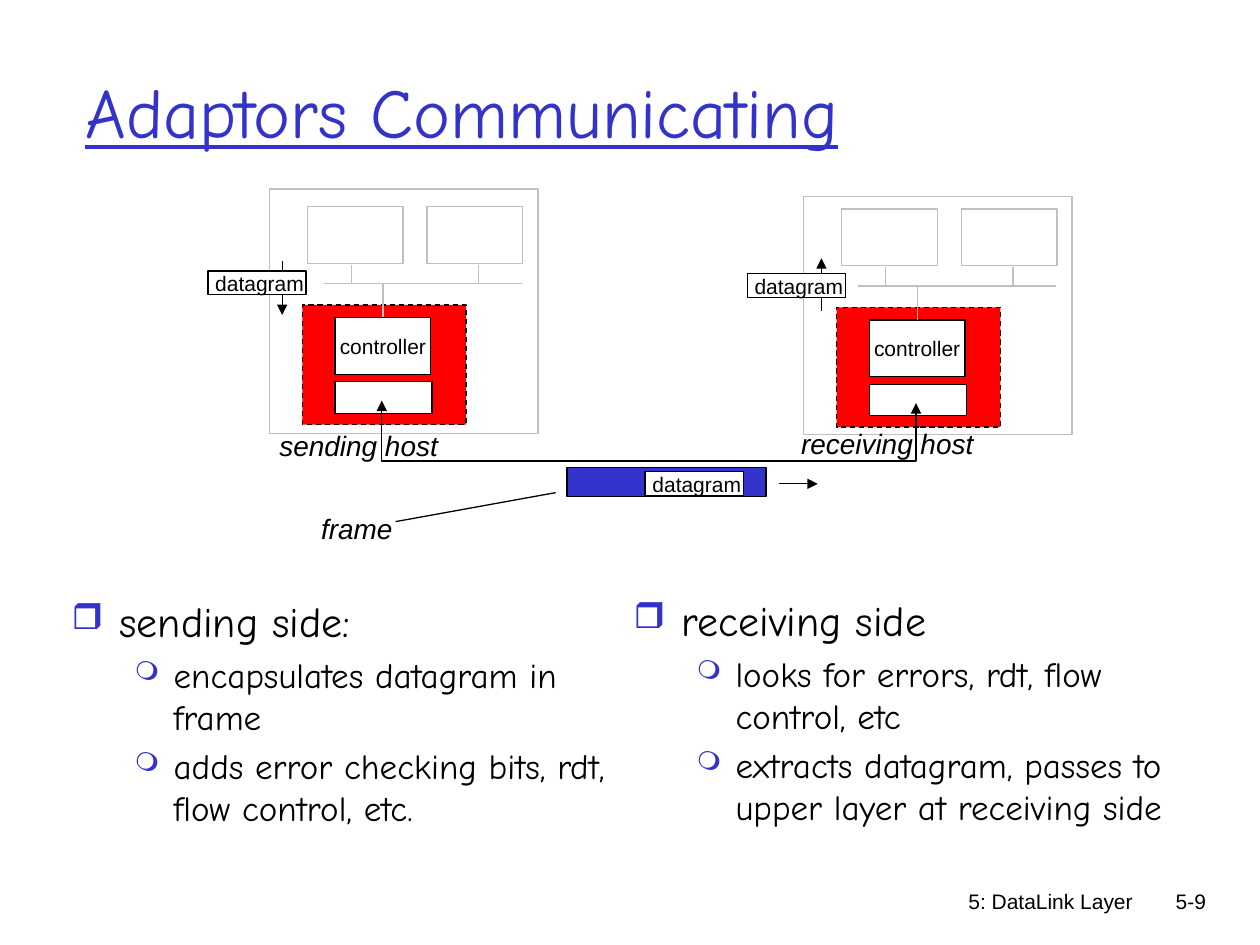
from dataclasses import dataclass
from typing import Optional

from lxml import etree
from pptx import Presentation
from pptx import util as u
from pptx.dml.color import RGBColor
from pptx.enum import dml, shapes, text
from pptx.oxml.ns import qn

COLORS = {"blue": "3333CC", "black": "000000", "white": "FFFFFF",
          "gray": "C0C0C0", "red": "FF0000"}
BODY_FONT, LABEL_FONT = "Comic Neue", "Arial"
LINE_WIDTH = u.Pt(0.75)
HOST_SIZE = (0.76, 0.45)  # screens and controller share one size


@dataclass
class Host:
    dx: float
    dy: float
    top: float
    height: float


@dataclass
class Label:
    words: str
    left: float
    top: float
    width: float
    height: float
    size: float = 12
    font: str = LABEL_FONT
    color: str = "black"
    italic: Optional[bool] = None
    underline: Optional[bool] = None
    align: Optional[text.PP_ALIGN] = None
    anchor: text.MSO_ANCHOR = text.MSO_ANCHOR.TOP
    wrap: bool = False


@dataclass
class BulletStyle:
    mark: str
    percent: int
    size: float
    margin: float
    indent: float


BULLETS = [BulletStyle("❒", 85, 24, 0.38, -0.38), BulletStyle("❍", 75, 20, 0.81, -0.31)]


def rgb(name: str) -> RGBColor:
    return RGBColor.from_string(COLORS[name])


def style_font(paragraph, size: float, name: str, color: str) -> None:
    paragraph.font.size = u.Pt(size)
    paragraph.font.name = name
    paragraph.font.color.rgb = rgb(color)


def add_box(slide, left: float, top: float, width: float, height: float,
            fill: str = "white", line: str = "black", dashed: bool = False):
    shape = slide.shapes.add_shape(shapes.MSO_SHAPE.RECTANGLE, u.Inches(left), u.Inches(top),
                                   u.Inches(width), u.Inches(height))
    shape.shadow.inherit = False
    shape.fill.solid()
    shape.fill.fore_color.rgb = rgb(fill)
    shape.line.color.rgb = rgb(line)
    shape.line.width = LINE_WIDTH
    if dashed:
        shape.line.dash_style = dml.MSO_LINE.DASH
    return shape


def add_arrowheads(shape, *ends: str) -> None:
    line = shape.line._get_or_add_ln()
    for end in ends:
        etree.SubElement(line, qn(f"a:{end}"), type="triangle")


def add_line(slide, x1: float, y1: float, x2: float, y2: float,
             color: str = "black", arrow: bool = False):
    connector = slide.shapes.add_connector(shapes.MSO_CONNECTOR.STRAIGHT, u.Inches(x1),
                                           u.Inches(y1), u.Inches(x2), u.Inches(y2))
    connector.line.color.rgb = rgb(color)
    connector.line.width = LINE_WIDTH
    etree.SubElement(connector._element.spPr, qn("a:effectLst"))
    if arrow:
        add_arrowheads(connector, "tailEnd")
    return connector


def add_label(slide, label: Label) -> None:
    box = slide.shapes.add_textbox(u.Inches(label.left), u.Inches(label.top),
                                   u.Inches(label.width), u.Inches(label.height))
    frame = box.text_frame
    frame.word_wrap = label.wrap
    if not label.wrap:
        frame.auto_size = text.MSO_AUTO_SIZE.SHAPE_TO_FIT_TEXT
    frame.vertical_anchor = label.anchor
    paragraph = frame.paragraphs[0]
    paragraph.text = label.words
    paragraph.alignment = label.align
    style_font(paragraph, label.size, label.font, label.color)
    paragraph.font.italic = label.italic
    paragraph.font.underline = label.underline


def add_datagram(slide, left: float, top: float) -> None:
    add_box(slide, left, top, 0.78, 0.19)
    add_label(slide, Label("datagram", left - 0.04, top - 0.05, 0.92, 0.3))


def add_host(slide, host: Host) -> None:
    dx, dy = host.dx, host.dy
    add_box(slide, 2.14 + dx, host.top, 2.13, host.height, line="gray")
    # Adaptor card with controller and link interface
    add_box(slide, 2.4 + dx, 2.42 + dy, 1.3, 0.95, fill="red", dashed=True)
    add_box(slide, 2.66 + dx, 3.03 + dy, 0.77, 0.25)
    controller = add_box(slide, 2.66 + dx, 2.52 + dy, *HOST_SIZE)
    frame = controller.text_frame
    frame.word_wrap = False
    frame.vertical_anchor = text.MSO_ANCHOR.MIDDLE
    paragraph = frame.paragraphs[0]
    paragraph.text = "controller"
    paragraph.alignment = text.PP_ALIGN.CENTER
    style_font(paragraph, 12, LABEL_FONT, "black")
    # Bus joining the controller to the two upper units
    bus = 2.25 + dy
    add_line(slide, 2.57 + dx, bus, 4.14 + dx, bus, "gray")
    stub = add_line(slide, 3.04 + dx, 2.52 + dy, 3.04 + dx, bus, "gray")
    stub.begin_connect(controller, 0)
    for left, stem in ((2.44, 2.79), (3.39, 3.8)):
        add_box(slide, left + dx, 1.64 + dy, *HOST_SIZE, line="gray")
        add_line(slide, stem + dx, bus, stem + dx, bus - 0.15, "gray")


def add_bullets(slide, left: float, top: float, width: float, height: float,
                items: list[tuple[int, str]]) -> None:
    box = slide.shapes.add_textbox(u.Inches(left), u.Inches(top), u.Inches(width), u.Inches(height))
    frame = box.text_frame
    frame.word_wrap = True
    for index, (level, words) in enumerate(items):
        style = BULLETS[level]
        paragraph = frame.add_paragraph() if index else frame.paragraphs[0]
        paragraph.text = words
        paragraph.level = level
        properties = paragraph._p.get_or_add_pPr()
        properties.set("marL", str(u.Inches(style.margin)))
        properties.set("indent", str(u.Inches(style.indent)))
        color = etree.SubElement(properties, qn("a:buClr"))
        etree.SubElement(color, qn("a:srgbClr"), val=COLORS["blue"])
        etree.SubElement(properties, qn("a:buSzPct"), val=str(style.percent * 1000))
        etree.SubElement(properties, qn("a:buChar"), char=style.mark)
        paragraph.space_before = u.Pt(style.size * 0.2)
        style_font(paragraph, style.size, BODY_FONT, "black")


def add_link(slide) -> None:
    points = [(3.03, 3.18), (3.03, 3.66), (7.27, 3.66), (7.27, 3.2)]
    corners = [(u.Inches(x), u.Inches(y)) for x, y in points]
    builder = slide.shapes.build_freeform(*corners[0])
    builder.add_line_segments(corners[1:], close=False)
    link = builder.convert_to_shape()
    link.shadow.inherit = False
    link.fill.background()
    link.line.color.rgb = rgb("black")
    link.line.width = LINE_WIDTH
    add_arrowheads(link, "headEnd", "tailEnd")


def main() -> None:
    presentation = Presentation()
    presentation.slide_width, presentation.slide_height = u.Inches(10), u.Inches(7.5)
    slide = presentation.slides.add_slide(presentation.slide_layouts[6])

    # Footer, title and the two lists
    right = text.PP_ALIGN.RIGHT
    add_label(slide, Label("5: DataLink Layer", 5.92, 7, 3.17, 0.5, align=right, wrap=True))
    add_label(slide, Label("5-9", 8.93, 7, 0.74, 0.5, align=right, wrap=True))
    add_label(slide, Label("Adaptors Communicating", 0.58, 0.25, 8.5, 1.25, 40, BODY_FONT, "blue",
                           underline=True, anchor=text.MSO_ANCHOR.MIDDLE, wrap=True))
    add_bullets(slide, 0.47, 4.68, 4.45, 2.12, [
        (0, "sending side:"), (1, "encapsulates datagram in frame"),
        (1, "adds error checking bits, rdt, flow control, etc.")])
    add_bullets(slide, 4.93, 4.67, 4.47, 2.02, [
        (0, "receiving side"), (1, "looks for errors, rdt, flow control, etc"),
        (1, "extracts datagram, passes to upper layer at receiving side")])

    # Hosts
    for host in (Host(0, 0, 1.5, 1.94), Host(4.24, 0.02, 1.56, 1.89)):
        add_host(slide, host)
    add_label(slide, Label("sending host", 2.12, 3.35, 1.46, 0.37, 16, italic=True))
    add_label(slide, Label("receiving host", 6.26, 3.34, 1.57, 0.37, 16, italic=True))

    # Datagrams going down and up
    add_line(slide, 2.24, 2.07, 2.24, 2.5, arrow=True)
    add_datagram(slide, 1.65, 2.15)
    add_line(slide, 6.52, 2.47, 6.52, 2.05, arrow=True)
    add_datagram(slide, 5.93, 2.17)

    # Link and the frame that travels on it
    add_link(slide)
    add_box(slide, 4.5, 3.71, 1.58, 0.23, fill="blue")
    add_datagram(slide, 5.12, 3.74)
    add_line(slide, 6.18, 3.84, 6.49, 3.84, arrow=True)
    add_label(slide, Label("frame", 2.45, 4.01, 0.77, 0.37, 16, italic=True))
    add_line(slide, 3.14, 4.14, 4.41, 3.91)

    presentation.save("out.pptx")


if __name__ == "__main__":
    main()
